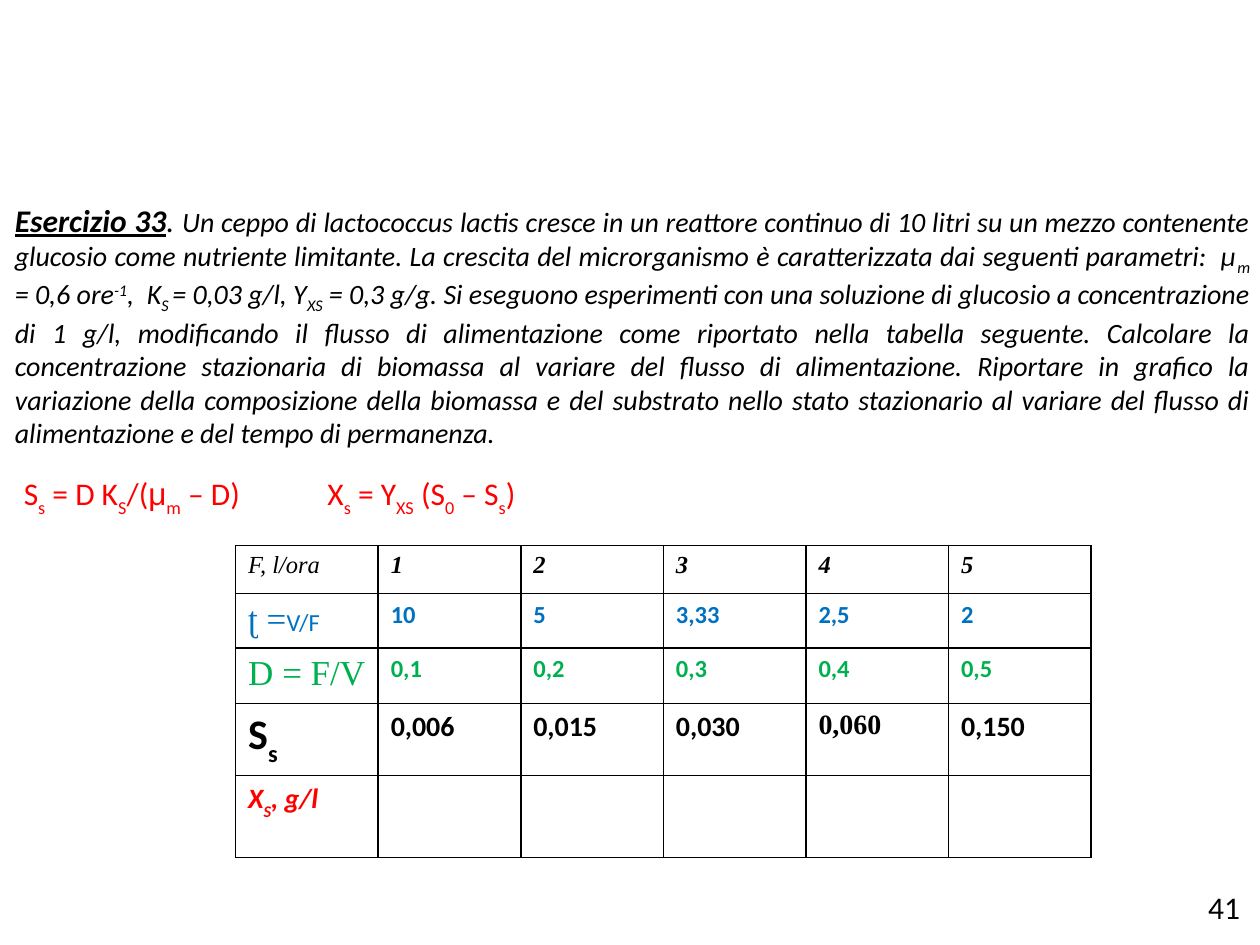
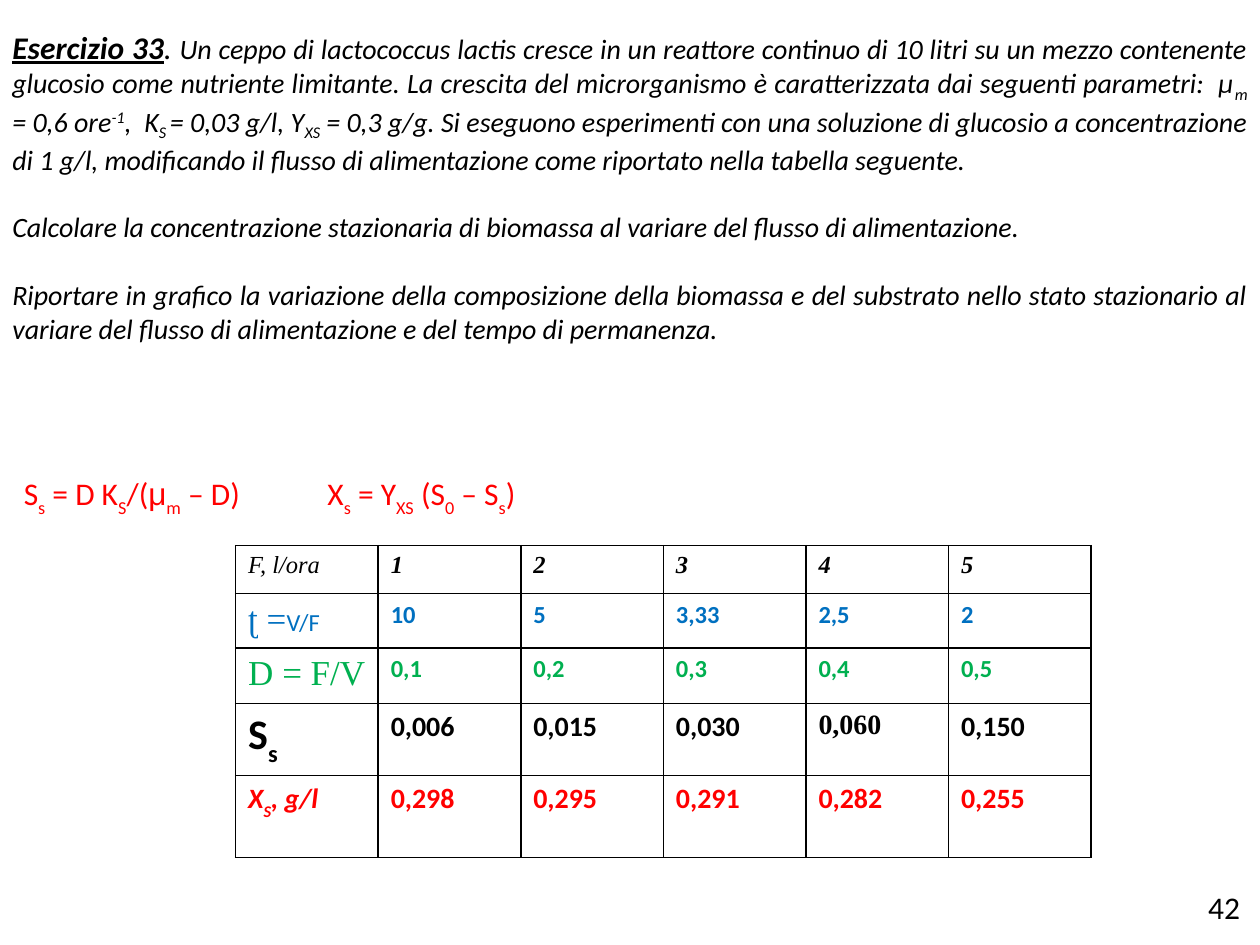
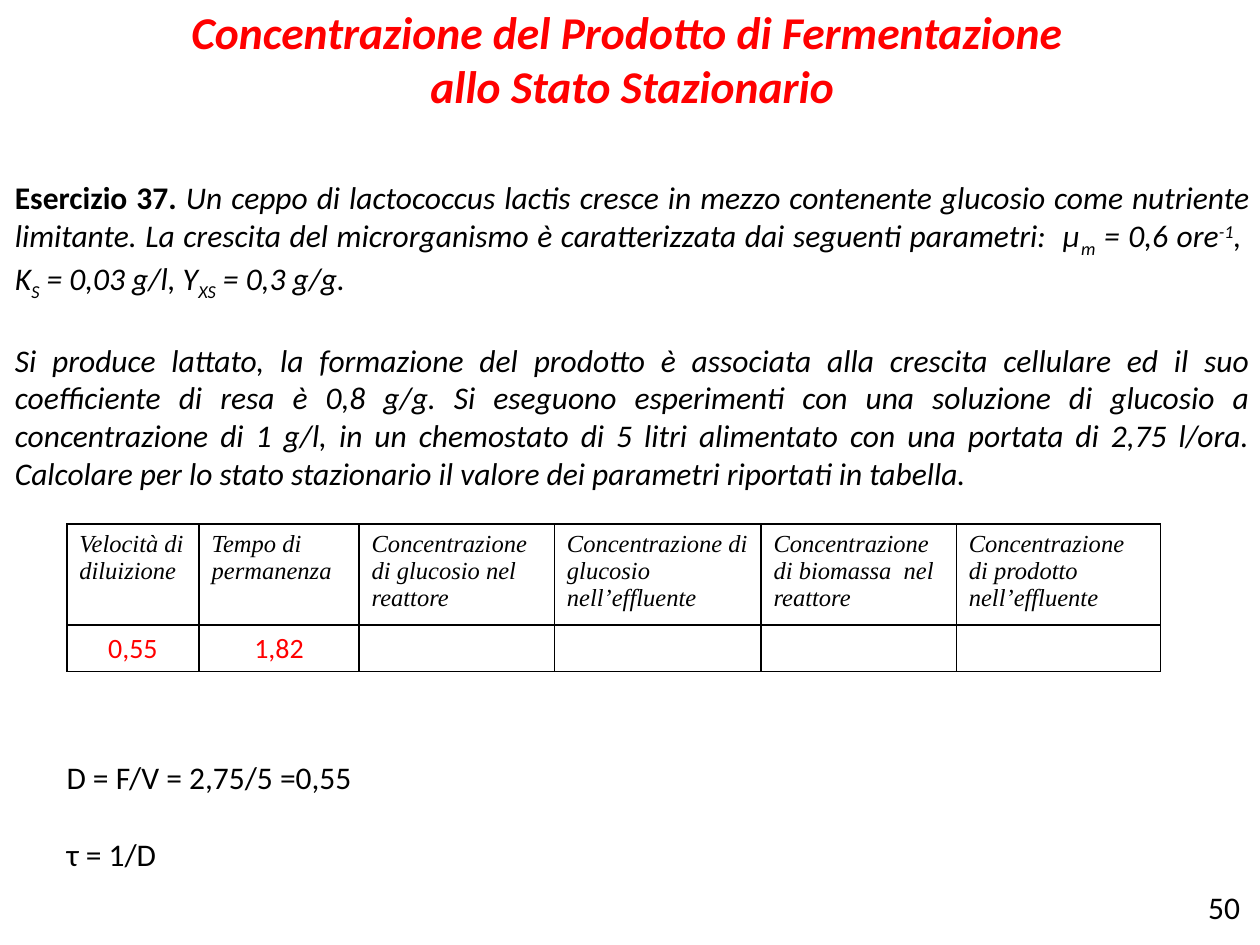
"""Build three slides of exercises on continuous fermentation."""
from dataclasses import dataclass, replace
from typing import NamedTuple

from lxml.etree import SubElement
from pptx import Presentation
from pptx.dml.color import RGBColor
from pptx.enum.text import MSO_ANCHOR, MSO_AUTO_SIZE, PP_ALIGN
from pptx.oxml.ns import qn
from pptx.util import Inches, Pt


@dataclass(frozen=True)
class Theme:
    """Colours, fonts and type sizes shared by the slides."""
    black: str = "000000"
    red: str = "FF0000"
    blue: str = "0070C0"
    green: str = "00B050"
    sans: str = "Calibri"
    serif: str = "Times New Roman"
    symbol: str = "Arial"
    title: int = 26
    symbol_size: int = 24
    label: int = 20
    text: int = 18
    small: int = 16
    cell: int = 14
    border: int = 1


T = Theme()


@dataclass(frozen=True)
class Style:
    """Character formatting of a run."""
    size: int = T.text
    color: str = T.black
    font: str = T.sans
    bold: bool = False
    italic: bool = False
    underline: bool = False
    sub: int = -30


class Box(NamedTuple):
    """Left, top, width and height in inches."""
    x: float
    y: float
    w: float
    h: float


PLAIN = Style()
FORMULA = Style(color=T.red)
TITLE = Style(T.title, T.red, bold=True, italic=True)
PROSE = Style(italic=True, sub=-25)
SMALL_PROSE = replace(PROSE, size=T.small)
HEADER = Style(T.cell, font=T.serif, italic=True)
RESULT = Style(T.small, bold=True)
BIOMASS = replace(RESULT, color=T.red)
ANSWER = Style(T.small, T.red)

PARAMETERS = "μ|_m| = 0,6 ore|^-1|,  K|_S"
STRAIN_33 = (
    "Un ceppo di lactococcus lactis cresce in un reattore continuo di 10 litri "
    "su un mezzo contenente glucosio come nutriente limitante. La crescita del "
    "microrganismo è caratterizzata dai seguenti parametri:  " + PARAMETERS +
    " |= 0,03 g/l, Y|_XS| = 0,3 g/g. Si eseguono esperimenti con una soluzione "
    "di glucosio a concentrazione di 1 g/l, modificando il flusso di "
    "alimentazione come riportato nella tabella seguente.")
QUESTIONS_33 = [
    "Calcolare la concentrazione stazionaria di biomassa al variare del flusso "
    "di alimentazione.",
    "Riportare in grafico la variazione della composizione della biomassa e del "
    "substrato nello stato stazionario al variare del flusso di alimentazione e "
    "del tempo di permanenza."]
HEADING_33 = [("Esercizio 33", replace(PROSE, bold=True, underline=True)),
              (". ", PROSE)]
STRAIN_37 = (
    " Un ceppo di lactococcus lactis cresce in mezzo contenente glucosio come "
    "nutriente limitante. La crescita del microrganismo è caratterizzata dai "
    "seguenti parametri:  " + PARAMETERS + "| = 0,03 g/l, Y|_XS| = 0,3 g/g.")
QUESTION_37 = (
    "Si produce lattato, la formazione del prodotto è associata alla crescita "
    "cellulare ed il suo coefficiente di resa è 0,8 g/g. Si eseguono esperimenti "
    "con una soluzione di glucosio a concentrazione di 1 g/l, in un chemostato "
    "di 5 litri alimentato con una portata di 2,75 l/ora. Calcolare per lo stato "
    "stazionario il valore dei parametri riportati in tabella.")


def inches(box):
    """Convert a box to lengths."""
    return [Inches(v) for v in box]


def add_runs(p, text, style):
    """Add text to a paragraph; pieces after | starting with _ or ^ are shifted."""
    shifts = {"_": style.sub, "^": 30}
    for piece in text.split("|"):
        shift = shifts.get(piece[0])
        r = p.add_run()
        r.text = piece[1:] if shift else piece
        f = r.font
        f.name, f.size = style.font, Pt(style.size)
        f.bold, f.italic, f.underline = style.bold, style.italic, style.underline
        f.color.rgb = RGBColor.from_string(style.color)
        if shift:
            r._r.get_or_add_rPr().set("baseline", str(shift * 1000))


def fill_text(tf, paragraphs, align=PP_ALIGN.LEFT, gap=0):
    """Write paragraphs, each a list of (text, style), with a gap between them."""
    for i, runs in enumerate(paragraphs):
        p = tf.add_paragraph() if i else tf.paragraphs[0]
        p.alignment = align
        p.space_before = Pt(gap if i else 0)
        for text, style in runs:
            add_runs(p, text, style)


def add_text(slide, box, paragraphs, wrap=True, anchor=MSO_ANCHOR.TOP, **layout):
    """Add a text box."""
    tf = slide.shapes.add_textbox(*inches(box)).text_frame
    tf.word_wrap = wrap
    tf.vertical_anchor = anchor
    fill_text(tf, paragraphs, **layout)


def add_problem(slide, box, paragraphs, gap=0):
    """Add the justified statement of an exercise."""
    add_text(slide, box, paragraphs, anchor=MSO_ANCHOR.MIDDLE,
             align=PP_ALIGN.JUSTIFY, gap=gap)


def add_number(slide, number):
    """Add the slide number in the bottom right corner."""
    add_text(slide, Box(9.49, 7, 0.53, 0.5), [[(str(number), PLAIN)]], wrap=False)


def outline_cell(cell):
    """Draw the four borders of a cell without a fill."""
    tc_pr = cell._tc.get_or_add_tcPr()
    for side in ("a:lnL", "a:lnR", "a:lnT", "a:lnB"):
        ln = SubElement(tc_pr, qn(side), w=str(Pt(T.border)))
        SubElement(SubElement(ln, qn("a:solidFill")), qn("a:srgbClr"), val=T.black)
    cell.fill.background()


def add_grid(slide, box, widths, heights, rows, aligns):
    """Add a bordered table whose cells are lists of (text, style)."""
    frame = slide.shapes.add_table(len(heights), len(widths), *inches(box))
    table = frame.table
    table.first_row = table.horz_banding = False
    for column, width in zip(table.columns, widths):
        column.width = Inches(width)
    for row, height, contents, align in zip(table.rows, heights, rows, aligns):
        row.height = Inches(height)
        for cell, runs in zip(row.cells, contents):
            outline_cell(cell)
            fill_text(cell.text_frame, [runs], align)
            if not runs:
                SubElement(cell.text_frame.paragraphs[0]._p, qn("a:endParaRPr"),
                           sz=str(T.small * 100))


def styled(values, style):
    """Turn plain values into cells of one style, leaving empty ones empty."""
    return [[(v, style)] if v else [] for v in values]


def add_flow_table(slide, box, biomass):
    """Add the table of feed flow, residence time, dilution and results."""
    times = Style(T.cell, T.blue, bold=True)
    rates = replace(times, color=T.green)
    time_label = [("ʈ =", Style(T.label, T.blue, T.serif)),
                  ("V/F", replace(times, bold=False))]
    substrate = styled(["0,006", "0,015", "0,030", "0,060", "0,150"], RESULT)
    substrate[3] = [("0,060", replace(RESULT, font=T.serif))]
    rows = [
        [[("F, l/ora", HEADER)], *styled("12345", replace(HEADER, bold=True))],
        [time_label, *styled(["10", "5", "3,33", "2,5", "2"], times)],
        [[("D = F/V", Style(T.label, T.green, T.serif))],
         *styled(["0,1", "0,2", "0,3", "0,4", "0,5"], rates)],
        [[("S|_s", replace(RESULT, size=T.symbol_size))], *substrate],
        [[("X|_S|, g/l", replace(BIOMASS, italic=True))], *styled(biomass, BIOMASS)],
    ]
    add_grid(slide, box, [box.w / 6] * 6, [0.38, 0.43, 0.44, 0.57, 0.65], rows,
             [PP_ALIGN.LEFT] * 5)


def add_formulas(slide, box):
    """Add the steady state formulas side by side."""
    substrate = [("S|_s| = D K|_S|/(", FORMULA), ("μ", replace(FORMULA, font=T.symbol)),
                 ("_m| – D)", FORMULA)]
    biomass = [("X|_s| = Y|_XS| (S|_0| – S|_s|)", FORMULA)]
    for offset, runs in ((0, substrate), (2.41, biomass)):
        add_text(slide, Box(box.x + offset, box.y, box.w, box.h), [runs])


def flow_slide(prs, number, box, paragraphs, biomass):
    """Add a slide of exercise 33 with its formulas and table."""
    slide = prs.slides.add_slide(prs.slide_layouts[6])
    add_number(slide, number)
    first, *others = [[(text, SMALL_PROSE)] for text in paragraphs]
    add_problem(slide, box, [HEADING_33 + first, *others], gap=19.5)
    add_flow_table(slide, Box(1.87, 4.33, 6.79, 2.47), biomass)
    add_formulas(slide, Box(0.09, 3.71, 5.05, 0.4))


def add_title(slide, box, lines):
    """Place the title placeholder and write its lines."""
    sp = slide.shapes.title
    sp.left, sp.top, sp.width, sp.height = inches(box)
    tf = sp.text_frame
    tf.auto_size = MSO_AUTO_SIZE.NONE
    tf.vertical_anchor = MSO_ANCHOR.TOP
    fill_text(tf, [[(line, TITLE)] for line in lines], PP_ALIGN.CENTER)


def add_product_table(slide, box):
    """Add the table of steady state parameters."""
    headers = ["Velocità di diluizione", "Tempo di permanenza",
               "Concentrazione di glucosio nel reattore",
               "Concentrazione di glucosio nell’effluente",
               "Concentrazione di biomassa  nel reattore",
               "Concentrazione di prodotto nell’effluente"]
    answers = ["0,55", "1,82", "", "", "", ""]
    add_grid(slide, box, [1.05, 1.27, 1.55, 1.64, 1.55, 1.62], [0.8, 0.37],
             [styled(headers, HEADER), styled(answers, ANSWER)],
             [PP_ALIGN.LEFT, PP_ALIGN.CENTER])


def product_slide(prs, number):
    """Add the slide of exercise 37."""
    slide = prs.slides.add_slide(prs.slide_layouts[5])
    add_number(slide, number)
    add_title(slide, Box(0.02, -0.02, 10, 0.98),
              ["Concentrazione del Prodotto di Fermentazione ",
               "allo Stato Stazionario"])
    statement = [("Esercizio 37.", Style(bold=True)), (STRAIN_37, PROSE)]
    add_problem(slide, Box(0.02, 1.4, 10, 2.52),
                [statement, [(QUESTION_37, PROSE)]], gap=22)
    add_product_table(slide, Box(0.53, 4.16, 8.68, 1.17))
    add_text(slide, Box(0.43, 5.97, 2.5, 1.01),
             [[("D = F/V = 2,75/5 =0,55", PLAIN)], [("τ = 1/D", PLAIN)]],
             wrap=False, gap=22)


def main():
    """Build the slides and save the file."""
    prs = Presentation()
    prs.slide_width, prs.slide_height = Inches(10), Inches(7.5)
    flow_slide(prs, 41, Box(0.02, 1.57, 10, 2.02),
               [" ".join([STRAIN_33, *QUESTIONS_33])], [""] * 5)
    flow_slide(prs, 42, Box(0, 0.2, 10, 2.56), [STRAIN_33, *QUESTIONS_33],
               ["0,298", "0,295", "0,291", "0,282", "0,255"])
    product_slide(prs, 50)
    prs.save("out.pptx")


if __name__ == "__main__":
    main()
